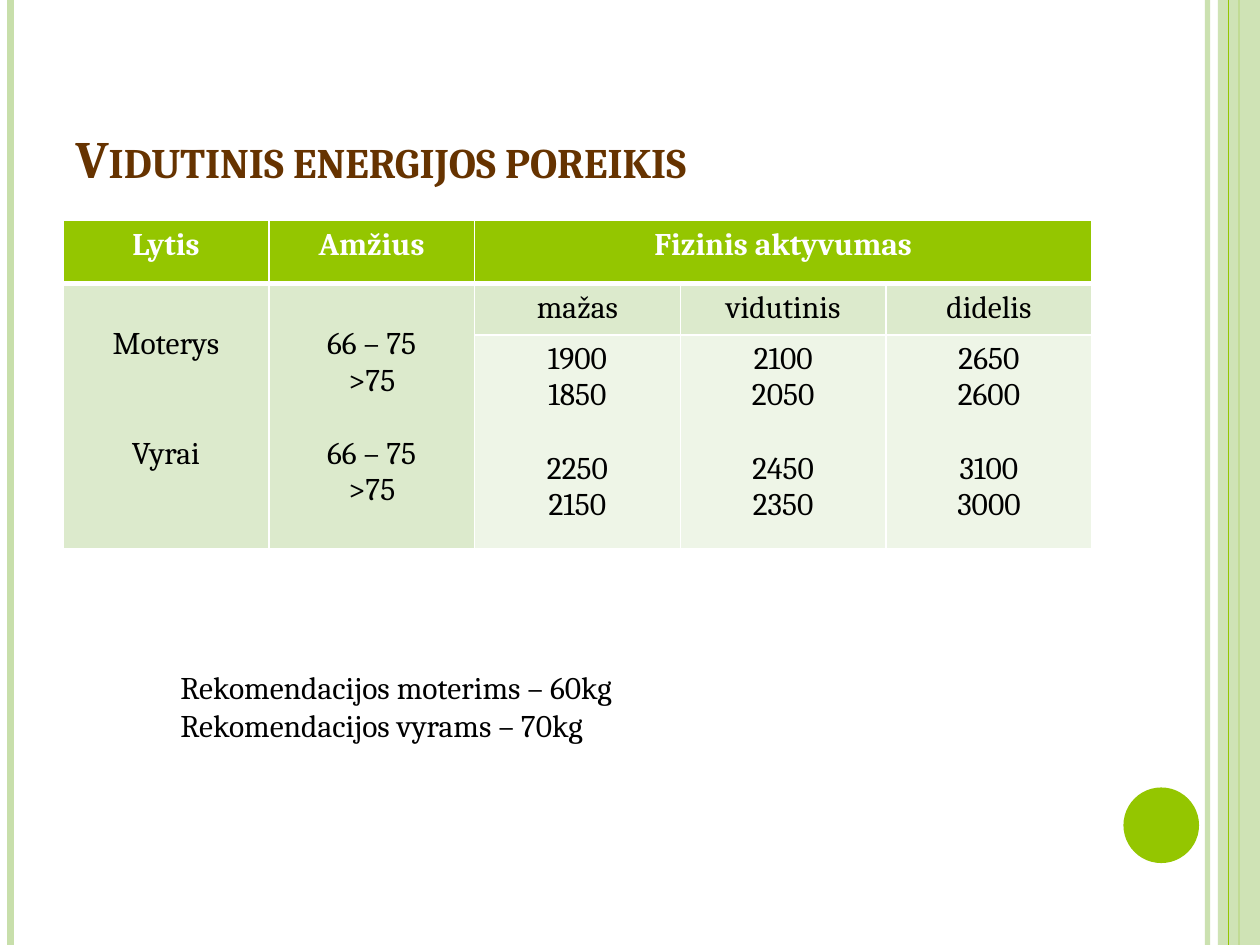
from lxml import etree
from pptx import Presentation
from pptx import util as u
from pptx.dml.color import RGBColor
from pptx.enum import shapes, text
from pptx.oxml.ns import qn

COLORS = {
    "leaf": "94C600", "pale": "C8DFAB", "brown": "663300", "black": "000000",
    "white": "FFFFFF", "band": "DCEACC", "light": "EEF5E7",
}
FONT = "Cambria"
BODY = 18
BLANK = 21
UNIT = u.Inches(10) / 120

HEADERS = ["Lytis", "Amžius", "Fizinis aktyvumas"]
AGES = [("66 – 75", 0), (">75", 0), ("66 – 75", 1), (">75", 0)]
ACTIVITY = {
    "mažas": ["1900", "1850", "2250", "2150"],
    "vidutinis": ["2100", "2050", "2450", "2350"],
    "didelis": ["2650", "2600", "3100", "3000"],
}


def grid(*counts):
    """Turn counts of grid units (120 columns by 90 rows) into lengths."""
    return [u.Emu(round(count * UNIT)) for count in counts]


def color(name):
    """Look up a named colour."""
    return RGBColor.from_string(COLORS[name])


def style(paragraph, size, shade, bold=False):
    """Format every run of a paragraph."""
    for run in paragraph.runs:
        run.font.name, run.font.size, run.font.bold = FONT, u.Pt(size), bold
        run.font.color.rgb = color(shade)


def set_alpha(shape, percent):
    """Make the colours of a shape partly transparent."""
    for tone in shape._element.spPr.iter(qn("a:srgbClr")):
        etree.SubElement(tone, qn("a:alpha"), val=str(percent * 1000))


def add_stripe(slide, column, shade, width):
    """Draw a vertical line over the whole height at a grid column."""
    stripe = slide.shapes.add_connector(
        shapes.MSO_CONNECTOR.STRAIGHT, *grid(column, 0, column, 90))
    stripe.line.color.rgb = color(shade)
    stripe.line.width = u.Pt(width)
    etree.SubElement(stripe._element.spPr, qn("a:effectLst"))
    return stripe


def add_solid(slide, kind, box, shade):
    """Draw a filled shape without an outline."""
    solid = slide.shapes.add_shape(kind, *grid(*box))
    solid.shadow.inherit = False
    solid.fill.solid()
    solid.fill.fore_color.rgb = color(shade)
    solid.line.fill.background()
    return solid


def add_frame(slide):
    """Draw the stripes along both edges and the round badge."""
    set_alpha(add_stripe(slide, 115, "pale", 3), 93)
    add_stripe(slide, 1, "pale", 4.5)
    add_stripe(slide, 118, "leaf", 1.5)
    set_alpha(add_solid(slide, shapes.MSO_SHAPE.RECTANGLE, (116, 0, 4, 90), "pale"), 87)
    add_stripe(slide, 117, "leaf", 0.75)
    add_solid(slide, shapes.MSO_SHAPE.OVAL, (107, 75, 7.2, 7.2), "leaf")


def add_title(slide, box, words):
    """Place and format the title placeholder."""
    title = slide.shapes.title
    title.left, title.top, title.width, title.height = grid(*box)
    frame = title.text_frame
    frame.text = words
    frame.auto_size = text.MSO_AUTO_SIZE.NONE
    frame.vertical_anchor = text.MSO_ANCHOR.BOTTOM
    heading = frame.paragraphs[0]
    heading.alignment = text.PP_ALIGN.LEFT
    style(heading, 30, "brown", bold=True)
    heading.runs[0].font._element.set("cap", "small")


def set_borders(cell, top, bottom):
    """Give a cell white borders, with the given top and bottom widths."""
    properties = cell._tc.get_or_add_tcPr()
    for side, width in zip("LRTB", (1, 1, top, bottom)):
        edge = etree.SubElement(properties, qn(f"a:ln{side}"), w=str(u.Pt(width)))
        paint = etree.SubElement(edge, qn("a:solidFill"))
        etree.SubElement(paint, qn("a:srgbClr"), val=COLORS["white"])


def fill_cell(cell, entries, shade="black", bold=False):
    """Write centred entries, each a text and its count of lines left free above."""
    cell.text_frame.text = "\n".join(words for words, _ in entries)
    for paragraph, (_, gap) in zip(cell.text_frame.paragraphs, entries):
        paragraph.alignment = text.PP_ALIGN.CENTER
        if gap:
            paragraph.space_before = u.Pt(gap * BLANK)
        style(paragraph, BODY, shade, bold)


def add_needs_table(slide, box):
    """Build the table of energy needs by sex, age and activity."""
    table = slide.shapes.add_table(3, 5, *grid(*box)).table
    for column in table.columns:
        column.width = grid(box[2] / 5)[0]
    for row, height, backdrop, top, bottom in zip(
            table.rows, (6, 4.9, 20.4), ("leaf", "band", "light"), (1, 3, 1), (3, 1, 1)):
        row.height = grid(height)[0]
        for cell in row.cells:
            set_borders(cell, top, bottom)
            cell.fill.solid()
            cell.fill.fore_color.rgb = color(backdrop)

    table.cell(0, 2).merge(table.cell(0, 4))
    for column, header in enumerate(HEADERS):
        fill_cell(table.cell(0, column), [(header, 0)], "white", bold=True)

    for column, entries in enumerate(([("Moterys", 0), ("Vyrai", 2)], AGES)):
        group = table.cell(1, column)
        group.merge(table.cell(2, column))
        group.margin_top = u.Inches(0.05) + u.Pt(BLANK)
        fill_cell(group, entries)

    for column, (level, needs) in enumerate(ACTIVITY.items(), start=2):
        fill_cell(table.cell(1, column), [(level, 0)])
        fill_cell(table.cell(2, column), list(zip(needs, (0, 0, 1, 0))))


def add_advice(slide, box, lines):
    """Write the recommendations below the table."""
    frame = slide.shapes.add_textbox(*grid(*box)).text_frame
    frame.word_wrap = False
    frame.auto_size = text.MSO_AUTO_SIZE.SHAPE_TO_FIT_TEXT
    frame.text = "\n".join(lines)
    for paragraph in frame.paragraphs:
        style(paragraph, BODY, "black")


def main():
    """Build the slide and save it."""
    deck = Presentation()
    deck.slide_width, deck.slide_height = grid(120, 90)
    slide = deck.slides.add_slide(deck.slide_layouts.get_by_name("Title Only"))
    add_frame(slide)
    add_title(slide, (6, 3.6, 98, 15), "Vidutinis energijos poreikis")
    add_needs_table(slide, (6, 21, 98, 31.3))
    add_advice(slide, (16, 63, 49.3, 8.5),
               ["Rekomendacijos moterims – 60kg", "Rekomendacijos vyrams – 70kg"])
    deck.save("out.pptx")


if __name__ == "__main__":
    main()
